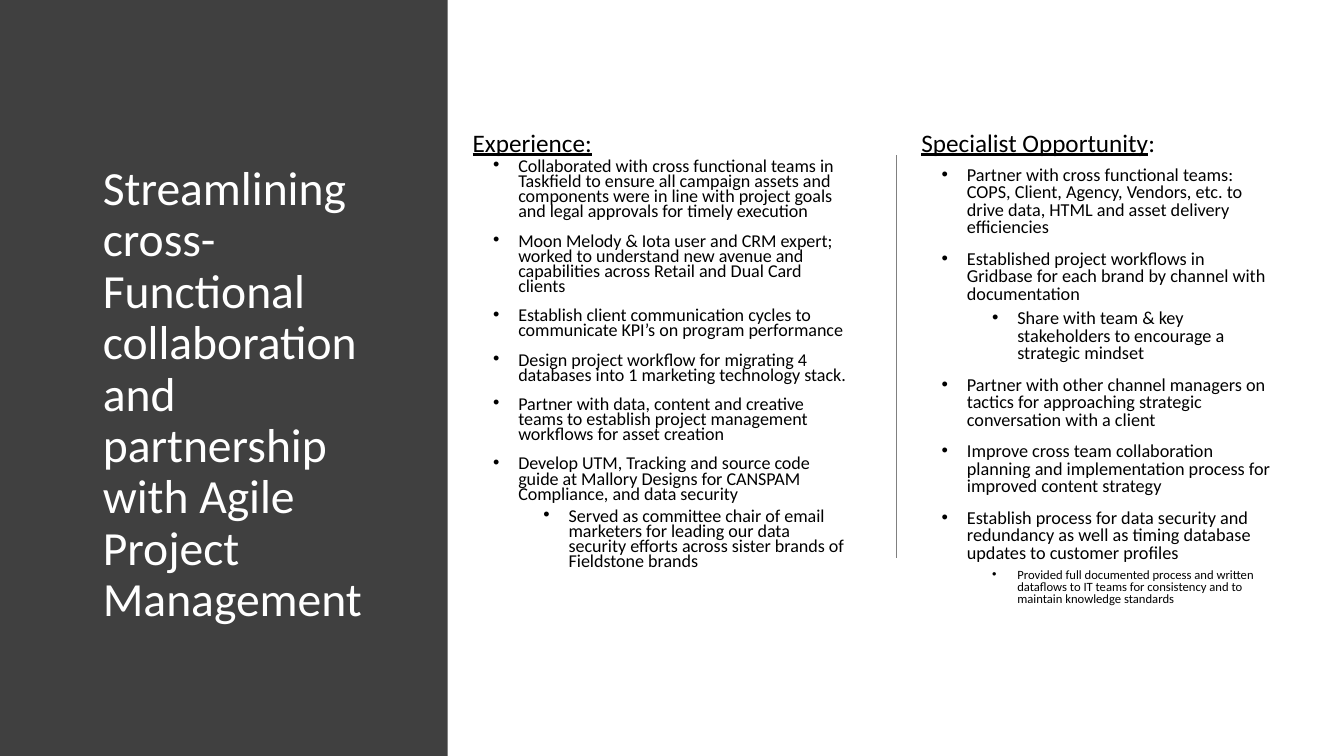
"""Build the slide on cross-functional collaboration and Agile project management."""
import lxml.etree
import pptx
import pptx.dml.color
import pptx.enum.shapes
import pptx.enum.text
import pptx.oxml.ns
import pptx.util

Inches = pptx.util.Inches
Pt = pptx.util.Pt
qn = pptx.oxml.ns.qn

FONT = "Calibri"
COLORS = {"panel": "404040", "title": "FFFFFF", "text": "000000", "divider": "808080"}

EXPERIENCE = [
    (0, "Collaborated with cross functional teams in Taskfield to ensure all campaign assets and "
        "components were in line with project goals and legal approvals for timely execution"),
    (0, "Moon Melody & Iota user and CRM expert; worked to understand new avenue and "
        "capabilities across Retail and Dual Card clients"),
    (0, "Establish client communication cycles to communicate KPI’s on program performance"),
    (0, "Design project workflow for migrating 4 databases into 1 marketing technology stack."),
    (0, "Partner with data, content and creative teams to establish project management "
        "workflows for asset creation"),
    (0, "Develop UTM, Tracking and source code guide at Mallory Designs for CANSPAM "
        "Compliance, and data security"),
    (1, "Served as committee chair of email marketers for leading our data security efforts "
        "across sister brands of Fieldstone brands"),
]
OPPORTUNITY = [
    (0, "Partner with cross functional teams: COPS, Client, Agency, Vendors, etc. to drive data, "
        "HTML and asset delivery efficiencies"),
    (0, "Established project workflows in Gridbase for each brand by channel with documentation"),
    (1, "Share with team & key stakeholders to encourage a strategic mindset"),
    (0, "Partner with other channel managers on tactics for approaching strategic conversation "
        "with a client"),
    (0, "Improve cross team collaboration planning and implementation process for improved "
        "content strategy"),
    (0, "Establish process for data security and redundancy as well as timing database updates "
        "to customer profiles"),
    (1, "Provided full documented process and written dataflows to IT teams for consistency and "
        "to maintain knowledge standards"),
]


def rgb(name):
    return pptx.dml.color.RGBColor.from_string(COLORS[name])


def place(sp, left, top, width, height):
    sp.left, sp.top = Inches(left), Inches(top)
    sp.width, sp.height = Inches(width), Inches(height)


def style_run(r, size, color, underline=False):
    r.font.name = FONT
    r.font.size = Pt(size)
    r.font.color.rgb = rgb(color)
    r.font.underline = underline


def prepare_frame(tf, anchor):
    tf.word_wrap = True
    tf.auto_size = pptx.enum.text.MSO_AUTO_SIZE.NONE
    tf.vertical_anchor = anchor


def add_panel(s):
    sp = s.shapes.add_shape(pptx.enum.shapes.MSO_SHAPE.RECTANGLE,
                            0, 0, Inches(4.44), Inches(7.5))
    sp.shadow.inherit = False
    sp.fill.solid()
    sp.fill.fore_color.rgb = rgb("panel")
    sp.line.fill.background()
    s.shapes.title.element.addprevious(sp.element)


def fill_title(sp, text):
    place(sp, 0.92, 1.54, 3.17, 4.77)
    prepare_frame(sp.text_frame, pptx.enum.text.MSO_ANCHOR.MIDDLE)
    sp.text_frame.text = text
    p = sp.text_frame.paragraphs[0]
    p.alignment = pptx.enum.text.PP_ALIGN.LEFT
    p.line_spacing = 0.9
    style_run(p.runs[0], 34, "title")


def add_bullet(p, level):
    pPr = p._p.get_or_add_pPr()
    pPr.set("marL", str(Inches(0.25 + 0.5 * level)))
    pPr.set("indent", str(Inches(-0.25)))
    lxml.etree.SubElement(pPr, qn("a:buFont")).set("typeface", "Arial")
    lxml.etree.SubElement(pPr, qn("a:buChar")).set("char", "•")


def fill_list(sp, items, size, spacing, last_size):
    tf = sp.text_frame
    prepare_frame(tf, pptx.enum.text.MSO_ANCHOR.TOP)
    tf.text = "\n".join(text for _, text in items)
    for i, (p, (level, _)) in enumerate(zip(tf.paragraphs, items)):
        p.level = level
        add_bullet(p, level)
        p.alignment = pptx.enum.text.PP_ALIGN.LEFT
        p.line_spacing = spacing
        p.space_before = Pt((10, 5)[level] if i else 0)
        p.space_after = Pt(0)
        style_run(p.runs[0], last_size if i == len(items) - 1 else size, "text")


def add_heading(s, left, text, suffix=""):
    sp = s.shapes.add_textbox(Inches(left), Inches(1.21), Inches(2.66), Inches(0.4))
    sp.text_frame.word_wrap = True
    p = sp.text_frame.paragraphs[0]
    p.text = text
    style_run(p.runs[0], 18, "text", True)
    if suffix:
        r = p.add_run()
        r.text = suffix
        style_run(r, 18, "text")


def add_divider(s):
    line = s.shapes.add_connector(pptx.enum.shapes.MSO_CONNECTOR.STRAIGHT,
                                  Inches(8.89), Inches(1.54), Inches(8.89), Inches(5.54))
    line.line.color.rgb = rgb("divider")
    line.line.width = Pt(1)
    lxml.etree.SubElement(line.element.spPr, qn("a:effectLst"))


def main():
    prs = pptx.Presentation()
    prs.slide_width, prs.slide_height = Inches(13.33), Inches(7.5)
    s = prs.slides.add_slide(prs.slide_layouts.get_by_name("Two Content"))
    add_panel(s)
    fill_title(s.shapes.title, "Streamlining cross-Functional collaboration and partnership "
                               "with Agile Project Management")
    experience, opportunity = s.placeholders[1], s.placeholders[2]
    place(experience, 4.79, 1.54, 3.75, 4.77)
    fill_list(experience, EXPERIENCE, 12.9, 0.7, 12.9)
    place(opportunity, 9.24, 1.61, 3.5, 4.77)
    fill_list(opportunity, OPPORTUNITY, 13, 0.8, 9)
    add_divider(s)
    add_heading(s, 4.59, "Experience:")
    add_heading(s, 9.04, "Specialist Opportunity", ":")
    prs.save("out.pptx")


if __name__ == "__main__":
    main()
